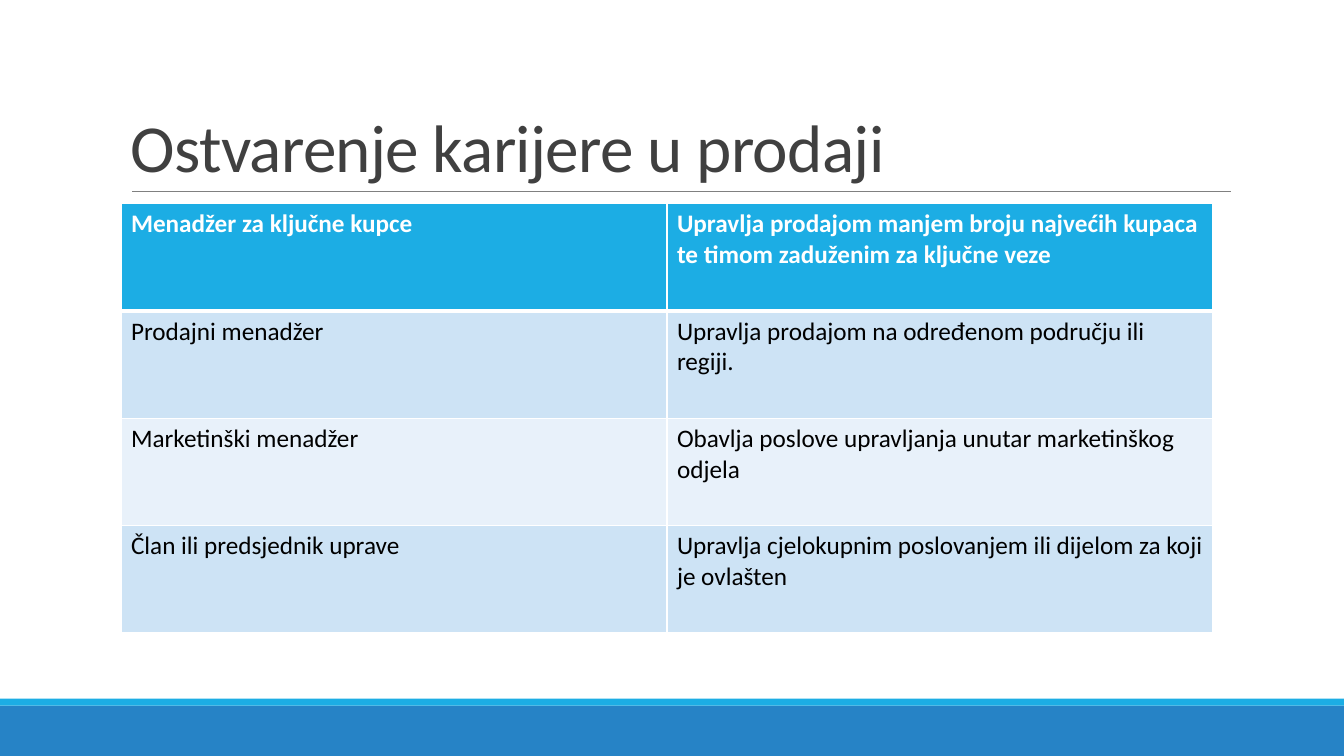
from typing import NamedTuple

from pptx import Presentation
from pptx.dml.color import RGBColor
from pptx.enum.shapes import MSO_CONNECTOR, MSO_SHAPE
from pptx.enum.text import MSO_ANCHOR
from pptx.oxml.ns import qn
from pptx.slide import Slide
from pptx.table import _Cell as Cell
from pptx.text.text import TextFrame as Frame
from pptx.util import Pt
from lxml.etree import SubElement as Sub

WHITE = RGBColor(0xFF, 0xFF, 0xFF)
BLACK = RGBColor(0, 0, 0)
INK = RGBColor(0x40, 0x40, 0x40)
GRAY = RGBColor(0x80, 0x80, 0x80)
BLUE = RGBColor(0x26, 0x83, 0xC6)
CYAN = RGBColor(0x1C, 0xAD, 0xE4)
PALE = RGBColor(0xCD, 0xE3, 0xF5)
LIGHT = RGBColor(0xE8, 0xF1, 0xFA)

WIDE, HIGH = 960, 540
LEFT = 86.4
COL, ROW = 390, 76.68


class Bar(NamedTuple):
    top: float
    height: float
    color: RGBColor


class Job(NamedTuple):
    name: str
    duty: str


BARS = [Bar(504, 36, BLUE), Bar(499, 5, CYAN)]
JOBS = [
    Job("Menadžer za ključne kupce",
        "Upravlja prodajom manjem broju najvećih kupaca te timom zaduženim za ključne veze"),
    Job("Prodajni menadžer", "Upravlja prodajom na određenom području ili regiji."),
    Job("Marketinški menadžer", "Obavlja poslove upravljanja unutar marketinškog odjela"),
    Job("Član ili predsjednik uprave",
        "Upravlja cjelokupnim poslovanjem ili dijelom za koji je ovlašten"),
]


def write(frame: Frame, text: str, *, size: float, color: RGBColor,
          bold: bool = False, space: float = 1, track: float = 0) -> None:
    """Fill a frame with one paragraph; track is letter spacing in points."""
    frame.word_wrap = True
    para = frame.paragraphs[0]
    para.line_spacing = space
    run = para.add_run()
    run.text = text
    font = run.font
    font.name, font.size, font.bold = "Calibri", Pt(size), bold
    font.color.rgb = color
    if track:
        run._r.get_or_add_rPr().set("spc", str(round(track * 100)))


def add_bar(slide: Slide, bar: Bar) -> None:
    shape = slide.shapes.add_shape(
        MSO_SHAPE.RECTANGLE, 0, Pt(bar.top), Pt(WIDE), Pt(bar.height))
    shape.shadow.inherit = False
    shape.fill.solid()
    shape.fill.fore_color.rgb = bar.color
    shape.line.fill.background()


def add_rule(slide: Slide) -> None:
    rule = slide.shapes.add_connector(
        MSO_CONNECTOR.STRAIGHT, Pt(94.32), Pt(136.8), Pt(879.12), Pt(136.8))
    rule.line.color.rgb = GRAY
    rule.line.width = Pt(0.5)
    Sub(rule._element.spPr, qn("a:effectLst"))


def add_title(slide: Slide) -> None:
    box = slide.shapes.add_textbox(Pt(LEFT), Pt(22.32), Pt(792), Pt(114.48))
    box.text_frame.vertical_anchor = MSO_ANCHOR.BOTTOM
    write(box.text_frame, "Ostvarenje karijere u prodaji",
          size=48, color=INK, space=0.85, track=-0.5)


def edge(cell: Cell, side: str, width: float) -> None:
    """Draw one white border; side is L, R, T or B."""
    props = cell._tc.get_or_add_tcPr()
    line = Sub(props, qn(f"a:ln{side}"), w=str(Pt(width)))
    fill = Sub(line, qn("a:solidFill"))
    Sub(fill, qn("a:srgbClr"), val=str(WHITE))


def add_jobs(slide: Slide) -> None:
    table = slide.shapes.add_table(
        len(JOBS), 2, Pt(LEFT), Pt(145.44), Pt(2 * COL), Pt(len(JOBS) * ROW)).table
    for col in table.columns:
        col.width = Pt(COL)
    for i, job in enumerate(JOBS):
        table.rows[i].height = Pt(ROW)
        head = i == 0
        shade = CYAN if head else PALE if i % 2 else LIGHT
        for cell, text in zip(table.rows[i].cells, job):
            for side in "LRTB":
                thick = (head and side == "B") or (i == 1 and side == "T")
                edge(cell, side, 3 if thick else 1)
            cell.fill.solid()
            cell.fill.fore_color.rgb = shade
            write(cell.text_frame, text, size=18, bold=head,
                  color=WHITE if head else BLACK)


def main() -> None:
    deck = Presentation()
    deck.slide_width, deck.slide_height = Pt(WIDE), Pt(HIGH)
    slide = deck.slides.add_slide(deck.slide_layouts[6])
    for bar in BARS:
        add_bar(slide, bar)
    add_rule(slide)
    add_title(slide)
    add_jobs(slide)
    deck.save("out.pptx")


if __name__ == "__main__":
    main()
